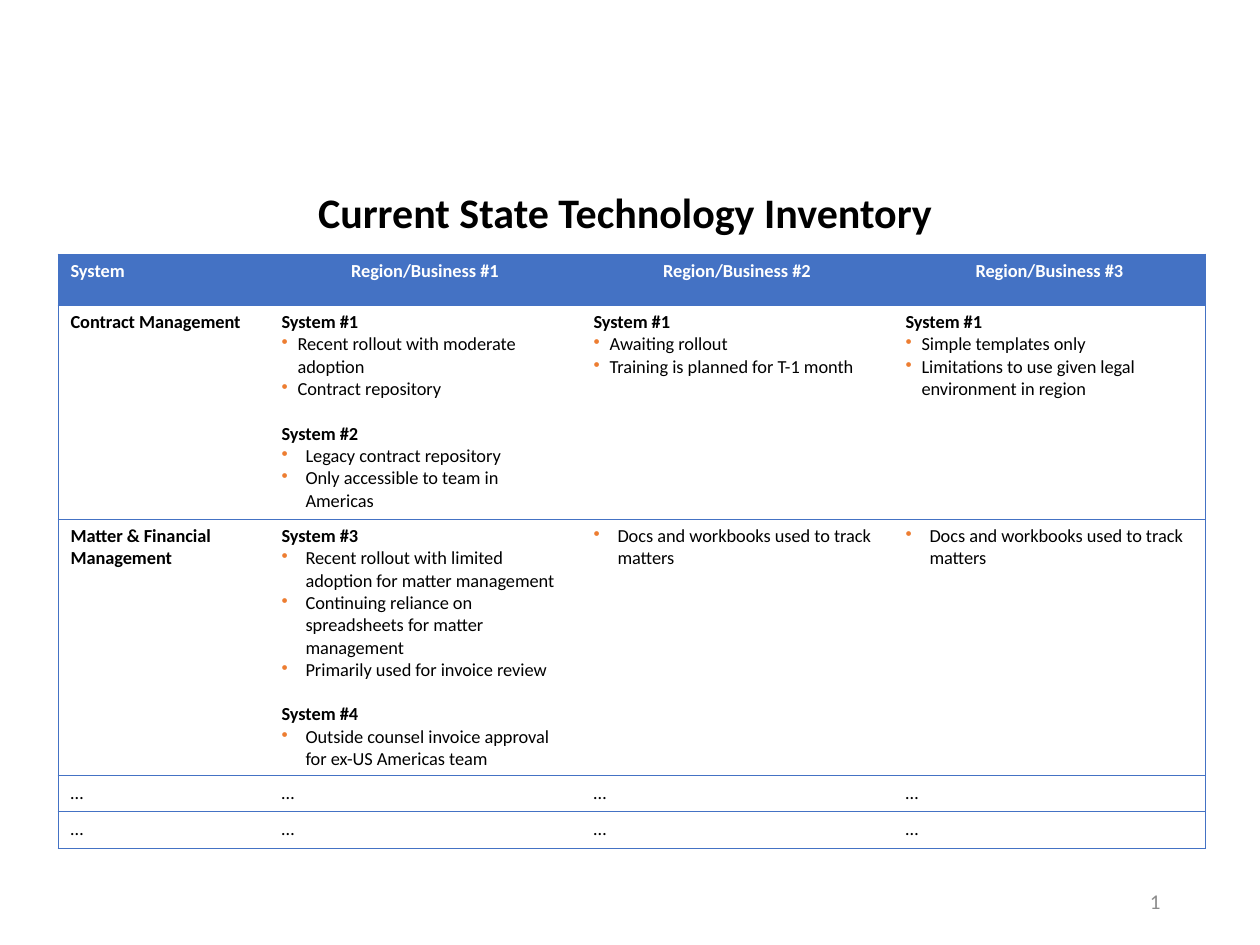
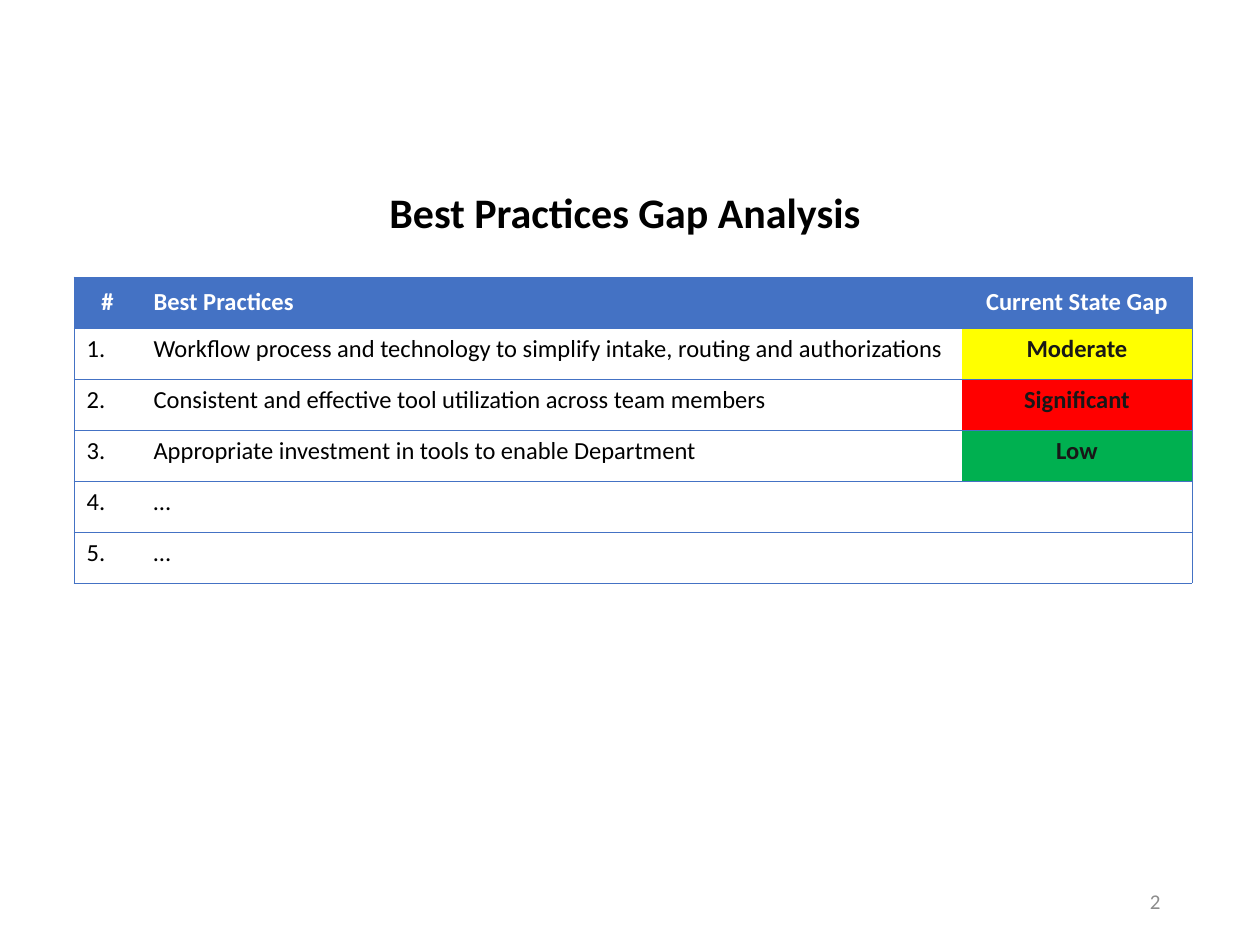
from dataclasses import dataclass

from lxml import etree
from pptx import Presentation
from pptx.dml.color import RGBColor
from pptx.enum.text import MSO_ANCHOR, MSO_AUTO_SIZE, PP_ALIGN
from pptx.oxml.ns import qn
from pptx.util import Emu, Pt

LEFT, CENTER, RIGHT = PP_ALIGN.LEFT, PP_ALIGN.CENTER, PP_ALIGN.RIGHT
TOP, MIDDLE = MSO_ANCHOR.TOP, MSO_ANCHOR.MIDDLE
NO_AUTOFIT = MSO_AUTO_SIZE.NONE

PX_PER_INCH = 126
TITLE_ONLY_LAYOUT = 5
SLIDE_NUMBER_ID = "{B6F15528-21DE-4FAA-801E-634DDDAF4B2B}"


@dataclass(frozen=True)
class Theme:
    font: str = "Calibri"
    text: str = "000000"
    rating_text: str = "181717"
    header_text: str = "FFFFFF"
    accent: str = "4472C4"
    bullet: str = "ED7D31"
    page_number: str = "8C8C8C"
    moderate: str = "FFFF00"
    significant: str = "FF0000"
    low: str = "00B050"
    title_size: float = 24
    page_number_size: float = 12
    inventory_size: float = 10.5
    gap_size: float = 14
    border_width: float = 0.5
    system_gap: float = 12.8


THEME = Theme()


@dataclass(frozen=True)
class Box:
    left: int
    top: int
    width: int
    height: int


TITLE_BOX = Box(58, 186, 1134, 67)
PAGE_NUMBER_BOX = Box(890, 876, 283, 50)


@dataclass(frozen=True)
class Line:
    text: str
    bold: bool = False
    color: str = THEME.text
    align: PP_ALIGN = LEFT
    indent: int = 0
    space_before: float = 0


@dataclass(frozen=True)
class Cell:
    lines: tuple[Line, ...] = ()
    fill: str | None = None
    anchor: MSO_ANCHOR = TOP


@dataclass(frozen=True)
class TableLayout:
    left: int
    top: int
    columns: tuple[int, ...]
    rows: tuple[int, ...]
    size: float


INVENTORY_LAYOUT = TableLayout(
    58, 254, (211, 312, 312, 313), (51, 214, 257, 36, 37), THEME.inventory_size
)
GAP_LAYOUT = TableLayout(74, 277, (67, 821, 230), (51,) * 6, THEME.gap_size)

NARROW_INDENT, WIDE_INDENT = 16, 24


def px(length: int) -> Emu:
    return Emu(round(length * 914400 / PX_PER_INCH))


def place(shape, box: Box) -> None:
    shape.left, shape.top = px(box.left), px(box.top)
    shape.width, shape.height = px(box.width), px(box.height)


def header(text: str, align: PP_ALIGN = CENTER, anchor: MSO_ANCHOR = TOP) -> Cell:
    line = Line(text, True, THEME.header_text, align)
    return Cell((line,), THEME.accent, anchor)


def plain(text: str, bold: bool = False) -> Cell:
    return Cell((Line(text, bold),))


def rating(text: str, fill: str) -> Cell:
    return Cell((Line(text, True, THEME.rating_text, CENTER),), fill)


def bullets(indent: int, *texts: str) -> tuple[Line, ...]:
    return tuple(Line(text, indent=indent) for text in texts)


def system(
    number: int, indent: int, *texts: str, space_before: float = 0
) -> tuple[Line, ...]:
    heading = Line(f"System #{number}", True, space_before=space_before)
    return (heading, *bullets(indent, *texts))


def add_run(paragraph, text: str, size: float, color: str, bold: bool = False):
    run = paragraph.add_run()
    run.text = text
    run.font.name = THEME.font
    run.font.size = Pt(size)
    run.font.bold = bold
    run.font.color.rgb = RGBColor.from_string(color)
    return run


def add_bullet(paragraph, indent: int) -> None:
    properties = paragraph._p.get_or_add_pPr()
    properties.set("marL", str(px(indent)))
    properties.set("indent", str(-px(indent)))
    color = etree.SubElement(properties, qn("a:buClr"))
    etree.SubElement(color, qn("a:srgbClr"), val=THEME.bullet)
    etree.SubElement(properties, qn("a:buChar"), char="•")


def set_borders(cell, first: bool, last: bool) -> None:
    properties = cell._tc.get_or_add_tcPr()
    visible = {"lnL": first, "lnR": last, "lnT": True, "lnB": True}
    for side, shown in visible.items():
        width = str(Pt(THEME.border_width))
        border = etree.SubElement(properties, qn(f"a:{side}"), w=width)
        if shown:
            fill = etree.SubElement(border, qn("a:solidFill"))
            etree.SubElement(fill, qn("a:srgbClr"), val=THEME.accent)
        else:
            etree.SubElement(border, qn("a:noFill"))


def write_cell(target, cell: Cell, size: float) -> None:
    target.vertical_anchor = cell.anchor
    if cell.fill:
        target.fill.solid()
        target.fill.fore_color.rgb = RGBColor.from_string(cell.fill)
    else:
        target.fill.background()
    frame = target.text_frame
    for index, line in enumerate(cell.lines):
        paragraph = frame.add_paragraph() if index else frame.paragraphs[0]
        paragraph.alignment = line.align
        if line.indent:
            add_bullet(paragraph, line.indent)
        if line.space_before:
            paragraph.space_before = Pt(line.space_before)
        add_run(paragraph, line.text, size, line.color, line.bold)


def add_table(slide, layout: TableLayout, content: list[list[Cell]]) -> None:
    table = slide.shapes.add_table(
        len(layout.rows),
        len(layout.columns),
        px(layout.left),
        px(layout.top),
        px(sum(layout.columns)),
        px(sum(layout.rows)),
    ).table
    table.first_row = False
    table.horz_banding = False
    for column, width in zip(table.columns, layout.columns):
        column.width = px(width)
    last_column = len(layout.columns) - 1
    for row_index, (height, cells) in enumerate(zip(layout.rows, content)):
        table.rows[row_index].height = px(height)
        for column_index, cell in enumerate(cells):
            target = table.cell(row_index, column_index)
            set_borders(target, column_index == 0, column_index == last_column)
            write_cell(target, cell, layout.size)


def add_page_number(slide, number: int) -> None:
    box = PAGE_NUMBER_BOX
    shape = slide.shapes.add_textbox(
        px(box.left), px(box.top), px(box.width), px(box.height)
    )
    frame = shape.text_frame
    frame.word_wrap = True
    frame.vertical_anchor = MIDDLE
    paragraph = frame.paragraphs[0]
    paragraph.alignment = RIGHT
    run = add_run(paragraph, str(number), THEME.page_number_size, THEME.page_number)
    field = etree.Element(qn("a:fld"), id=SLIDE_NUMBER_ID, type="slidenum")
    field.extend(list(run._r))
    paragraph._p.replace(run._r, field)


def add_slide(presentation, title: str):
    slide = presentation.slides.add_slide(
        presentation.slide_layouts[TITLE_ONLY_LAYOUT]
    )
    place(slide.shapes.title, TITLE_BOX)
    frame = slide.shapes.title.text_frame
    frame.word_wrap = True
    frame.auto_size = NO_AUTOFIT
    frame.vertical_anchor = TOP
    paragraph = frame.paragraphs[0]
    paragraph.alignment = CENTER
    paragraph.line_spacing = 0.9
    add_run(paragraph, title, THEME.title_size, THEME.text, True)
    add_page_number(slide, len(presentation.slides))
    return slide


def inventory_content() -> list[list[Cell]]:
    regions = [header(f"Region/Business #{number}") for number in (1, 2, 3)]
    first_contract = Cell(
        system(
            1, NARROW_INDENT, "Recent rollout with moderate adoption", "Contract repository"
        )
        + system(
            2,
            WIDE_INDENT,
            "Legacy contract repository",
            "Only accessible to team in Americas",
            space_before=THEME.system_gap,
        )
    )
    second_contract = Cell(
        system(1, NARROW_INDENT, "Awaiting rollout", "Training is planned for T-1 month")
    )
    third_contract = Cell(
        system(
            1,
            NARROW_INDENT,
            "Simple templates only",
            "Limitations to use given legal environment in region",
        )
    )
    first_matter = Cell(
        system(
            3,
            WIDE_INDENT,
            "Recent rollout with limited adoption for matter management",
            "Continuing reliance on spreadsheets for matter management",
            "Primarily used for invoice review",
        )
        + system(
            4,
            WIDE_INDENT,
            "Outside counsel invoice approval for ex-US Americas team",
            space_before=THEME.system_gap,
        )
    )
    office_files = Cell(bullets(WIDE_INDENT, "Docs and workbooks used to track matters"))
    return [
        [header("System", LEFT), *regions],
        [plain("Contract Management", True), first_contract, second_contract, third_contract],
        [plain("Matter & Financial Management", True), first_matter, office_files, office_files],
        *([plain("…")] * 4 for _ in range(2)),
    ]


def gap_content() -> list[list[Cell]]:
    practices = [
        (
            "Workflow process and technology to simplify intake, routing and authorizations",
            rating("Moderate", THEME.moderate),
        ),
        (
            "Consistent and effective tool utilization across team members",
            rating("Significant", THEME.significant),
        ),
        (
            "Appropriate investment in tools to enable Department",
            rating("Low", THEME.low),
        ),
        ("…", Cell()),
        ("…", Cell()),
    ]
    headings = [
        header("#", anchor=MIDDLE),
        header("Best Practices", LEFT, MIDDLE),
        header("Current State Gap", anchor=MIDDLE),
    ]
    return [headings] + [
        [plain(f"{number}."), plain(practice), gap]
        for number, (practice, gap) in enumerate(practices, 1)
    ]


def main() -> None:
    presentation = Presentation()
    presentation.slide_width, presentation.slide_height = px(1260), px(945)
    inventory = add_slide(presentation, "Current State Technology Inventory")
    add_table(inventory, INVENTORY_LAYOUT, inventory_content())
    gaps = add_slide(presentation, "Best Practices Gap Analysis")
    add_table(gaps, GAP_LAYOUT, gap_content())
    presentation.save("out.pptx")


if __name__ == "__main__":
    main()
